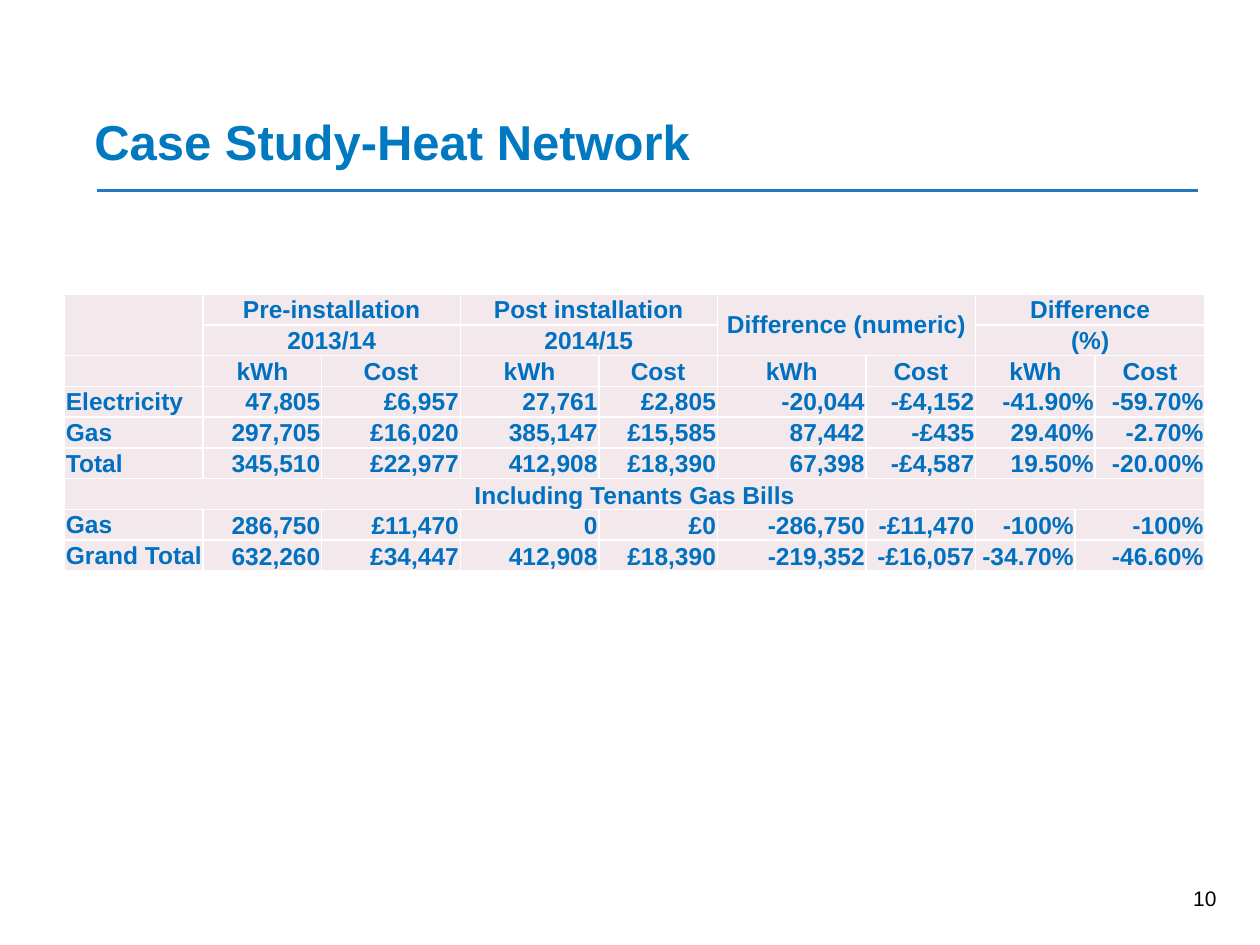
from lxml.etree import SubElement
from pptx import Presentation
from pptx.dml.color import RGBColor
from pptx.enum.shapes import MSO_CONNECTOR
from pptx.enum.text import MSO_ANCHOR, PP_ALIGN
from pptx.oxml.ns import qn
from pptx.util import Pt

TITLE_BLUE = RGBColor(0x00, 0x79, 0xC1)
RULE_BLUE = RGBColor(0x24, 0x78, 0xC0)
TABLE_BLUE = RGBColor(0x00, 0x70, 0xC0)
CELL_PINK = RGBColor(0xF3, 0xE8, 0xEB)
BLACK = RGBColor(0, 0, 0)
ROW_HEIGHT = 16.5
COLUMN_WIDTHS = [79.2, 67.7, 79.2, 79.2, 67.7, 85, 62.6, 56.9, 11.5, 62.6]


def write(frame, text, *, size, color, bold=False, align=PP_ALIGN.LEFT, anchor=MSO_ANCHOR.TOP):
    frame.word_wrap = True
    frame.vertical_anchor = anchor
    paragraph = frame.paragraphs[0]
    paragraph.alignment = align
    run = paragraph.add_run()
    run.text = text
    run.font.name = "Arial"
    run.font.size = Pt(size)
    run.font.bold = bold
    run.font.color.rgb = color


def style_cell(cell):
    """Fill the cell, tighten its margins and draw white 1 pt borders."""
    cell.margin_left = cell.margin_right = cell.margin_top = Pt(0.75)
    cell.margin_bottom = 0
    properties = cell._tc.get_or_add_tcPr()
    for side in ("a:lnL", "a:lnR", "a:lnT", "a:lnB"):
        border = SubElement(properties, qn(side), w=str(Pt(1)))
        fill = SubElement(border, qn("a:solidFill"))
        SubElement(fill, qn("a:srgbClr"), val="FFFFFF")
    cell.fill.solid()
    cell.fill.fore_color.rgb = CELL_PINK


presentation = Presentation()
presentation.slide_width = Pt(720)
presentation.slide_height = Pt(540)
slide = presentation.slides.add_slide(presentation.slide_layouts[6])

rule = slide.shapes.add_connector(MSO_CONNECTOR.STRAIGHT, Pt(55.4), Pt(108.8), Pt(684.7), Pt(108.8))
rule.line.color.rgb = RULE_BLUE
rule.line.width = Pt(1.5)
SubElement(rule._element.spPr, qn("a:effectLst"))

title = slide.shapes.add_textbox(Pt(46.8), Pt(59.8), Pt(637.2), Pt(41))
write(title.text_frame, "Case Study-Heat Network", size=28, color=TITLE_BLUE, bold=True,
      anchor=MSO_ANCHOR.BOTTOM)

page_number = slide.shapes.add_textbox(Pt(534.2), Pt(502.6), Pt(168), Pt(28.8))
write(page_number.text_frame, "10", size=12, color=BLACK, align=PP_ALIGN.RIGHT)

# None marks a place covered by a merged cell.
ENERGY_ROWS = [
    ["", "Pre-installation", None, "Post installation", None, "Difference (numeric)", None,
     "Difference", None, None],
    [None, "2013/14", None, "2014/15", None, None, None, "(%)", None, None],
    ["", "kWh", "Cost", "kWh", "Cost", "kWh", "Cost", "kWh", None, "Cost"],
    ["Electricity", "47,805", "£6,957", "27,761", "£2,805", "-20,044", "-£4,152",
     "-41.90%", None, "-59.70%"],
    ["Gas", "297,705", "£16,020", "385,147", "£15,585", "87,442", "-£435",
     "29.40%", None, "-2.70%"],
    ["Total", "345,510", "£22,977", "412,908", "£18,390", "67,398", "-£4,587",
     "19.50%", None, "-20.00%"],
    ["Including Tenants Gas Bills"] + [None] * 9,
    ["Gas", "286,750", "£11,470", "0", "£0", "-286,750", "-£11,470", "-100%", "-100%", None],
    ["Grand Total", "632,260", "£34,447", "412,908", "£18,390", "-219,352", "-£16,057",
     "-34.70%", "-46.60%", None],
]
HEADER_ROWS = 3
TENANTS_ROW = 6

energy = slide.shapes.add_table(
    len(ENERGY_ROWS), len(COLUMN_WIDTHS), Pt(36.9), Pt(168),
    Pt(sum(COLUMN_WIDTHS)), Pt(ROW_HEIGHT * len(ENERGY_ROWS))).table
energy.first_row = False
energy.horz_banding = False
for column, width in zip(energy.columns, COLUMN_WIDTHS):
    column.width = Pt(width)
for row in energy.rows:
    row.height = Pt(ROW_HEIGHT)

# First row, first column, last row, last column
merges = [(0, 0, 1, 0), (0, 5, 1, 6), (TENANTS_ROW, 0, TENANTS_ROW, 9)]
merges += [(r, first, r, last) for r in (0, 1) for first, last in ((1, 2), (3, 4), (7, 9))]
merges += [(r, 7, r, 8) for r in range(2, TENANTS_ROW)]
merges += [(r, 8, r, 9) for r in (7, 8)]
for top, left, bottom, right in merges:
    energy.cell(top, left).merge(energy.cell(bottom, right))

for r, values in enumerate(ENERGY_ROWS):
    for c, value in enumerate(values):
        cell = energy.cell(r, c)
        style_cell(cell)
        if not value:
            SubElement(cell.text_frame.paragraphs[0]._p, qn("a:endParaRPr"), sz="1400")
            continue
        if r < HEADER_ROWS or r == TENANTS_ROW:
            align = PP_ALIGN.CENTER
        else:
            align = PP_ALIGN.RIGHT if c else PP_ALIGN.LEFT
        write(cell.text_frame, value, size=14, color=TABLE_BLUE, bold=True, align=align)
        at_bottom = r == TENANTS_ROW or (r > TENANTS_ROW and c > 0)
        cell.vertical_anchor = MSO_ANCHOR.BOTTOM if at_bottom else MSO_ANCHOR.MIDDLE

presentation.save("out.pptx")
